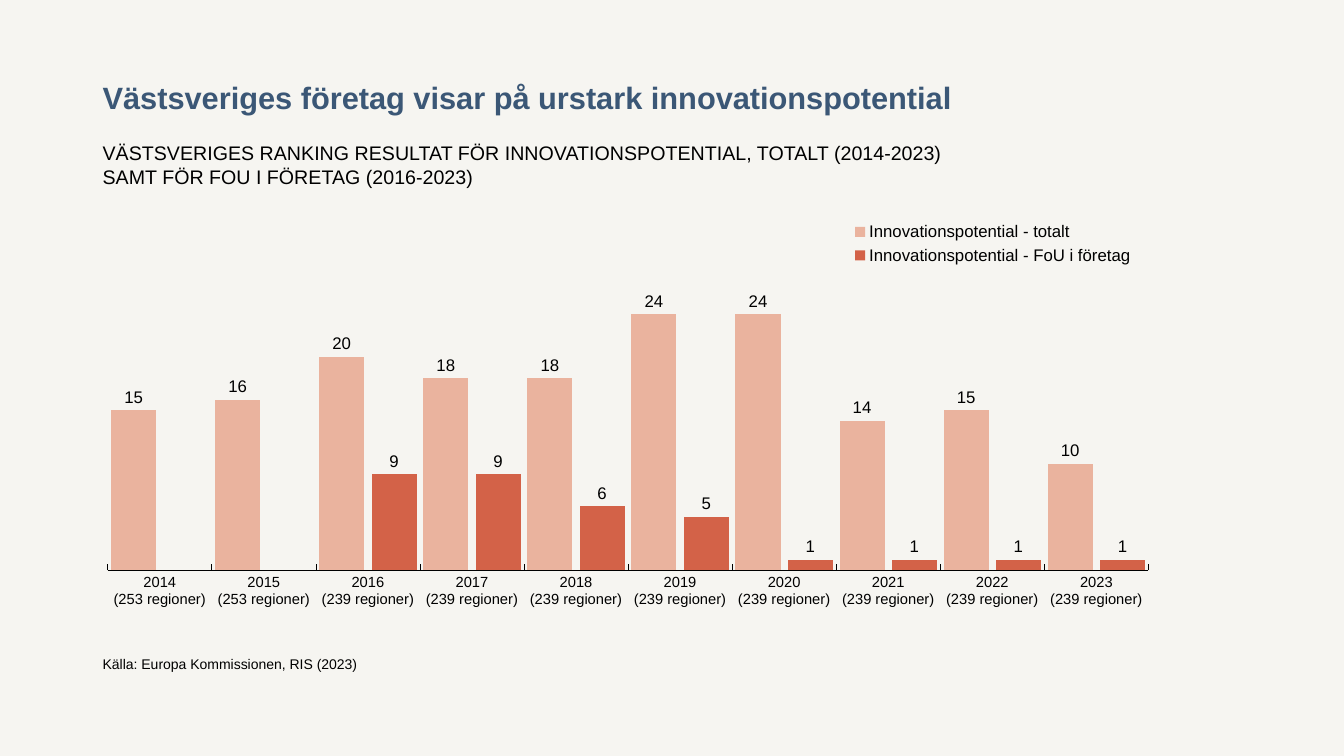
from pptx import Presentation
from pptx.chart.data import CategoryChartData
from pptx.dml.color import RGBColor
from pptx.enum.chart import XL_CHART_TYPE as ChartType
from pptx.enum.chart import XL_LABEL_POSITION as LabelPosition
from pptx.enum.chart import XL_LEGEND_POSITION as LegendPosition
from pptx.enum.chart import XL_TICK_LABEL_POSITION as TickLabelPosition
from pptx.enum.chart import XL_TICK_MARK as TickMark
from pptx.enum.text import MSO_ANCHOR as Anchor
from pptx.oxml import parse_xml
from pptx.oxml.ns import nsdecls
from pptx.util import Inches, Pt

COLORS = {
    "background": "F6F5F1",
    "title": "3B5776",
    "text": "000000",
    "total": "EAB39E",
    "company": "D36248",
}
FONT = "Arial"

REGION_COUNTS = {2014: 253, 2015: 253} | {year: 239 for year in range(2016, 2024)}
SERIES = [
    ("Innovationspotential - totalt", "total",
     [15, 16, 20, 18, 18, 24, 24, 14, 15, 10]),
    ("Innovationspotential - FoU i företag", "company",
     [None, None, 9, 9, 6, 5, 1, 1, 1, 1]),
]


def color(name):
    return RGBColor.from_string(COLORS[name])


def set_font(font, size, color_name="text", bold=False):
    for attribute, value in {"name": FONT, "size": Pt(size), "bold": bold}.items():
        setattr(font, attribute, value)
    font.color.rgb = color(color_name)


def add_text(slide, box, text, size, color_name="text", bold=False,
             anchor=Anchor.TOP, line_spacing=None):
    shape = slide.shapes.add_textbox(*map(Inches, box))
    frame = shape.text_frame
    frame.word_wrap = True
    frame.vertical_anchor = anchor
    paragraph = frame.paragraphs[0]
    paragraph.line_spacing = line_spacing
    run = paragraph.add_run()
    run.text = text
    set_font(run.font, size, color_name, bold)


def make_layout(x, y, width, height, inner=False):
    """Manual chart layout, in fractions of the chart area."""
    target = '<c:layoutTarget val="inner"/>' if inner else ""
    values = {"xMode": "edge", "yMode": "edge", "x": x, "y": y, "w": width, "h": height}
    parts = "".join(f'<c:{tag} val="{value}"/>' for tag, value in values.items())
    return parse_xml(f'<c:layout {nsdecls("c")}><c:manualLayout>{target}{parts}'
                     "</c:manualLayout></c:layout>")


def remove_layout(element):
    for layout in element.xpath("./c:layout"):
        element.remove(layout)


def format_axes(chart):
    years = chart.category_axis
    ranks = chart.value_axis
    for axis, values in (
        (years, {"major_tick_mark": TickMark.INSIDE, "minor_tick_mark": TickMark.NONE,
                 "has_major_gridlines": False}),
        (ranks, {"major_tick_mark": TickMark.NONE, "minor_tick_mark": TickMark.NONE,
                 "has_major_gridlines": False, "minimum_scale": 0, "maximum_scale": 30,
                 "tick_label_position": TickLabelPosition.NONE}),
    ):
        for attribute, value in values.items():
            setattr(axis, attribute, value)
    set_font(years.tick_labels.font, 10.5)
    years.format.line.color.rgb = color("text")
    years.format.line.width = Pt(0.5)
    ranks.format.line.fill.background()


def format_legend(chart):
    chart.has_legend = True
    legend = chart.legend
    legend.position = LegendPosition.TOP
    legend.include_in_layout = False
    set_font(legend.font, 12)
    element = legend._element
    remove_layout(element)
    element.xpath("./c:legendPos")[0].addnext(make_layout(0.7, 0.04, 0.28, 0.12))


def add_ranking_chart(slide, box):
    data = CategoryChartData()
    data.categories = [f"{year}\n({count} regioner)" for year, count in REGION_COUNTS.items()]
    for name, _, values in SERIES:
        data.add_series(name, values)
    chart = slide.shapes.add_chart(
        ChartType.COLUMN_CLUSTERED, *map(Inches, box), data).chart
    chart.has_title = False
    set_font(chart.font, 12)
    format_axes(chart)
    format_legend(chart)

    # Columns and their value labels
    plot = chart.plots[0]
    for attribute, value in {"gap_width": 15, "overlap": -16,
                             "vary_by_categories": False}.items():
        setattr(plot, attribute, value)
    for series, (_, color_name, _) in zip(plot.series, SERIES):
        series.format.fill.solid()
        series.format.fill.fore_color.rgb = color(color_name)
        labels = series.data_labels
        labels.show_value = True
        labels.position = LabelPosition.OUTSIDE_END
        set_font(labels.font, 12)

    # Plot position
    plot_area = chart._chartSpace.xpath("./c:chart/c:plotArea")[0]
    remove_layout(plot_area)
    plot_area.insert(0, make_layout(0.014, 0.115, 0.971, 0.727, inner=True))


def add_ranking_slide(presentation):
    slide = presentation.slides.add_slide(presentation.slide_layouts[6])
    slide.background.fill.solid()
    slide.background.fill.fore_color.rgb = color("background")
    left = 0.92

    # Heading
    add_text(slide, (left, 0.4, 11.5, 0.8),
             "Västsveriges företag visar på urstark innovationspotential",
             22, "title", bold=True, anchor=Anchor.BOTTOM, line_spacing=Pt(31))
    add_text(slide, (left, 1.35, 9.03, 0.51),
             "VÄSTSVERIGES RANKING RESULTAT FÖR INNOVATIONSPOTENTIAL, TOTALT (2014-2023) "
             "SAMT FÖR FOU I FÖRETAG (2016-2023)", 14)

    # Chart
    add_ranking_chart(slide, (left, 1.98, 10.63, 4.37))

    # Source line
    add_text(slide, (left, 6.45, 10.79, 0.27),
             "Källa: Europa Kommissionen, RIS (2023)", 10, anchor=Anchor.BOTTOM)


def main():
    presentation = Presentation()
    presentation.slide_width = Inches(13.33)
    presentation.slide_height = Inches(7.5)
    add_ranking_slide(presentation)
    presentation.save("out.pptx")


if __name__ == "__main__":
    main()
